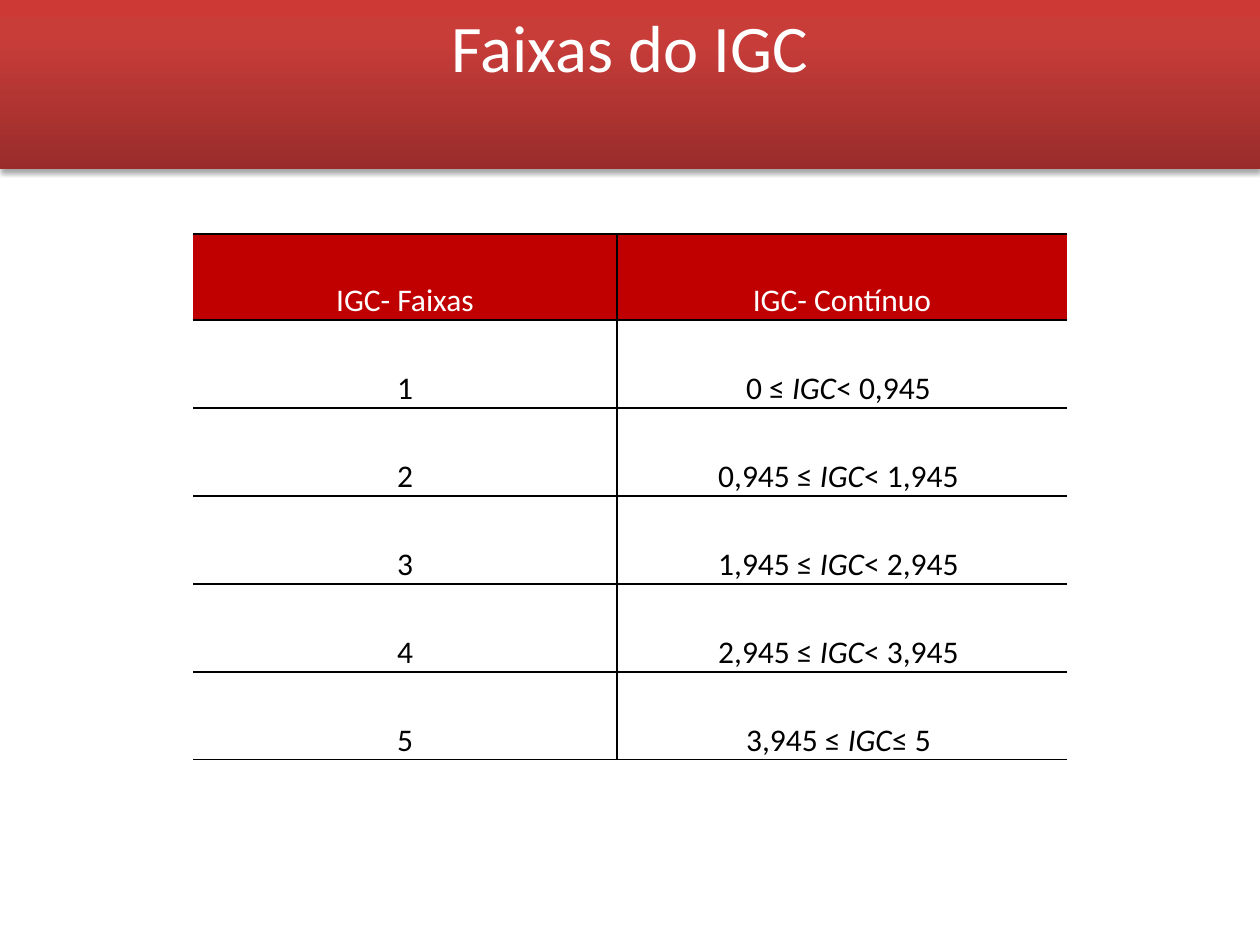
"""Build the slide "Faixas do IGC" with a header band and a table of IGC ranges."""
from copy import deepcopy

from lxml.etree import SubElement
from pptx import Presentation
from pptx.dml.color import RGBColor
from pptx.enum.shapes import MSO_SHAPE as Shape
from pptx.enum.text import MSO_ANCHOR as Anchor, PP_ALIGN as Align
from pptx.oxml import parse_xml
from pptx.oxml.ns import nsdecls, qn
from pptx.util import Emu, Pt

COLORS = {
    "band_bottom": "992D2B",
    "band_middle": "C93D39",
    "band_top": "CD3A36",
    "header": "C00000",
    "white": "FFFFFF",
    "black": "000000",
}
FONT = "Calibri"
NO_STYLE = "{2D5ABB26-0587-4C30-8999-92F81FD0307C}"
RANGES = [
    ("0 ≤ ", "< 0,945 "),
    ("0,945 ≤ ", "< 1,945 "),
    ("1,945 ≤ ", "< 2,945 "),
    ("2,945 ≤ ", "< 3,945 "),
    ("3,945 ≤ ", "≤ 5 "),
]


def px(count):
    return Emu(round(count * 914400 / 126))


def style(para, size, color):
    para.alignment = Align.CENTER
    para.font.name = FONT
    para.font.size = Pt(size)
    para.font.color.rgb = RGBColor.from_string(COLORS[color])


deck = Presentation()
deck.slide_width, deck.slide_height = px(1260), px(945)
page = deck.slides.add_slide(deck.slide_layouts[6])

band = page.shapes.add_shape(Shape.RECTANGLE, 0, 0, px(1260), px(169))
band.line.fill.background()
band.fill.gradient()
band.fill.gradient_angle = 90
stops = band.fill._fill._gradFill.find(qn("a:gsLst"))
stops.append(deepcopy(stops[-1]))
band_stops = [(0, "band_bottom"), (0.8, "band_middle"), (1, "band_top")]
for stop, (position, name) in zip(band.fill.gradient_stops, band_stops):
    stop.position = position
    stop.color.rgb = RGBColor.from_string(COLORS[name])
band.shadow.inherit = False
effects = band._element.spPr.find(qn("a:effectLst"))
effects.append(parse_xml(
    f'<a:outerShdw {nsdecls("a")} blurRad="{Pt(3.1)}" dist="{Pt(1.8)}" dir="5400000" rotWithShape="0">'
    f'<a:srgbClr val="{COLORS["black"]}"><a:alpha val="35000"/></a:srgbClr></a:outerShdw>'
))
band.text_frame.word_wrap = True
band.text_frame.vertical_anchor = Anchor.TOP
title = band.text_frame.paragraphs[0]
title.text = "Faixas do IGC"
style(title, 38, "white")

rows = [(["IGC- Faixas"], ["IGC- Contínuo"])]
for number, (lower, upper) in enumerate(RANGES, 1):
    rows.append(([str(number)], [lower, "IGC", upper]))

frame = page.shapes.add_table(len(rows), 2, px(193), px(234), px(874), px(526))
table = frame.table
table.first_row = table.horz_banding = False
table._tbl.tblPr.find(qn("a:tableStyleId")).text = NO_STYLE
for column, width in zip(table.columns, (424, 450)):
    column.width = px(width)

for row_index, row in enumerate(rows):
    table.rows[row_index].height = px(88 if row_index else 86)
    for column_index, pieces in enumerate(row):
        cell = table.cell(row_index, column_index)
        cell.vertical_anchor = Anchor.BOTTOM
        cell.margin_left = cell.margin_right = px(10)
        cell.margin_top = cell.margin_bottom = 0
        para = cell.text_frame.paragraphs[0]
        for piece in pieces:
            span = para.add_run()
            span.text = piece
            if piece == "IGC":
                span.font.italic = True
        style(para, 18, "black" if row_index else "white")
        if len(pieces) == 1:
            para.line_spacing = 1.15
        inner_side = "lnL" if column_index else "lnR"
        for side in (inner_side, "lnT", "lnB"):
            border = SubElement(cell._tc.get_or_add_tcPr(), qn(f"a:{side}"), w=str(Pt(1)))
            paint = SubElement(border, qn("a:solidFill"))
            SubElement(paint, qn("a:srgbClr"), val=COLORS["black"])
        if row_index:
            cell.fill.background()
        else:
            cell.fill.solid()
            cell.fill.fore_color.rgb = RGBColor.from_string(COLORS["header"])

deck.save("out.pptx")
